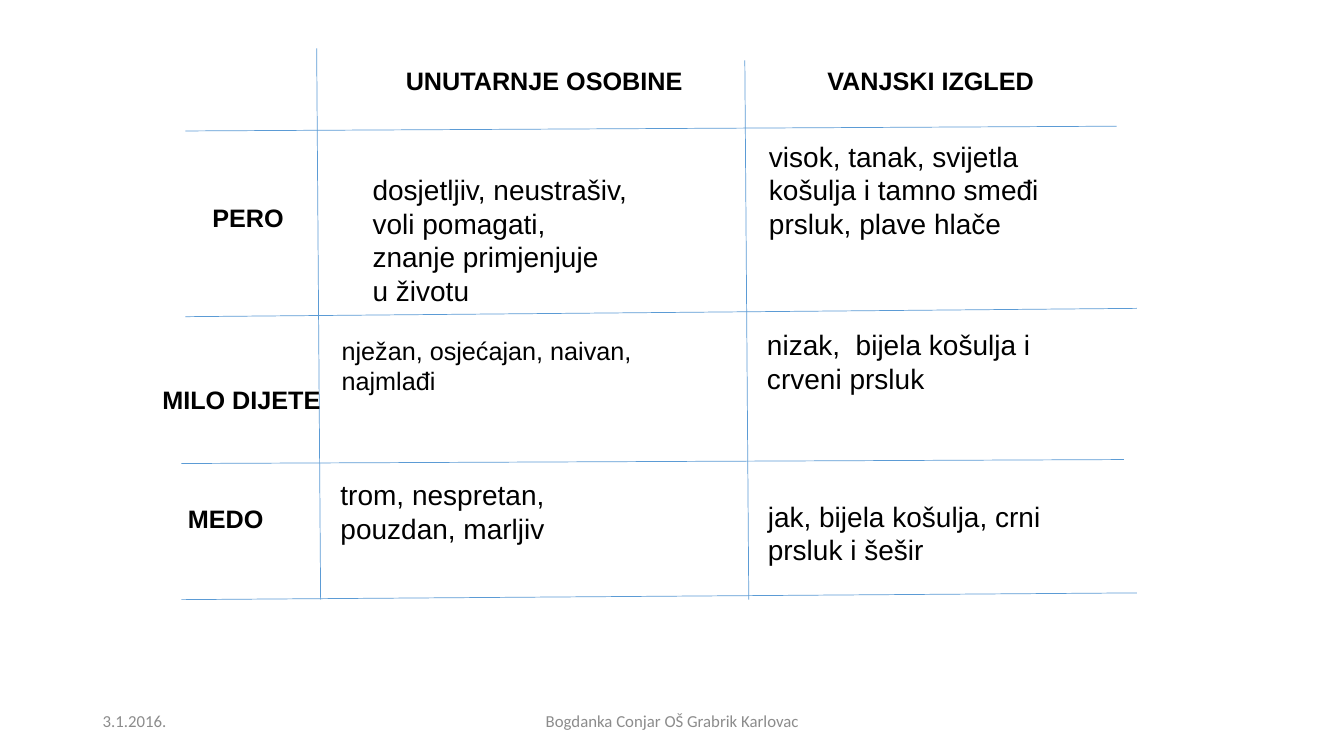
from lxml.etree import SubElement
from pptx import Presentation
from pptx.dml.color import RGBColor
from pptx.enum.shapes import MSO_CONNECTOR
from pptx.enum.text import MSO_ANCHOR, MSO_AUTO_SIZE, PP_ALIGN
from pptx.oxml.ns import qn
from pptx.util import Cm, Pt

ROW_RULES = [
    (4.67, 3.3, 28.14, 3.18),
    (4.67, 7.98, 28.65, 7.77),
    (4.57, 11.68, 28.32, 11.58),
    (4.57, 15.11, 28.65, 14.94),
]
COLUMN_RULES = [
    (7.98, 1.22, 8.08, 15.11),
    (18.77, 1.52, 18.87, 15.11),
]
HEADINGS = [
    ("UNUTARNJE OSOBINE", 9.93, 1.52, 7.57),
    ("VANJSKI IZGLED", 20.57, 1.52, 5.77),
    ("PERO", 5.08, 4.98, 2.34),
    ("MILO DIJETE", 3.81, 9.55, 4.55),
    ("MEDO", 4.47, 12.57, 2.44),
]
DESCRIPTIONS = [
    ("visok, tanak, svijetla košulja i tamno smeđi prsluk, plave hlače",
     19.13, 3.38, 8.2, 2.82, 20),
    ("nježan, osjećajan, naivan, najmlađi", 8.36, 8.33, 9.86, 1.8, 18),
    ("nizak,  bijela košulja i crveni prsluk", 19.08, 8.13, 9.12, 1.96, 20),
    ("trom, nespretan, pouzdan, marljiv", 8.33, 11.91, 6.4, 1.96, 20),
    ("jak, bijela košulja, crni prsluk i šešir", 19.1, 12.45, 7.44, 1.96, 20),
]
PERO_TRAITS = "dosjetljiv, neustrašiv,\nvoli pomagati,\nznanje primjenjuje\nu životu"


def color(value):
    return RGBColor.from_string(value)


class CharacterSlide:
    body_font = "Arial"
    footer_font = "Calibri"
    ink = "000000"
    muted = "8C8C8C"
    rule_color = "5B9BD5"

    def __init__(self, presentation):
        self.slide = presentation.slides.add_slide(presentation.slide_layouts[6])

    def rule(self, x1, y1, x2, y2):
        line = self.slide.shapes.add_connector(
            MSO_CONNECTOR.STRAIGHT, Cm(x1), Cm(y1), Cm(x2), Cm(y2))
        line.line.color.rgb = color(self.rule_color)
        line.line.width = Pt(0.5)
        SubElement(line._element.spPr, qn("a:effectLst"))

    def text(self, text, left, top, width, height, size=20, wrap=True, bold=False,
             align=PP_ALIGN.LEFT, font=body_font, ink=ink):
        box = self.slide.shapes.add_textbox(Cm(left), Cm(top), Cm(width), Cm(height))
        frame = box.text_frame
        frame.word_wrap = wrap
        frame.auto_size = MSO_AUTO_SIZE.SHAPE_TO_FIT_TEXT
        frame.text = text
        for paragraph in frame.paragraphs:
            paragraph.alignment = align
            paragraph.font.name = font
            paragraph.font.size = Pt(size)
            paragraph.font.bold = bold
            paragraph.font.color.rgb = color(ink)
        return frame

    def heading(self, text, left, top, width):
        self.text(text, left, top, width, 1.02, size=18, wrap=False, bold=True,
                  align=PP_ALIGN.CENTER)

    def footer(self, text, left, width, align):
        frame = self.text(text, left, 17.65, width, 1.02, size=12, align=align,
                          font=self.footer_font, ink=self.muted)
        frame.auto_size = MSO_AUTO_SIZE.NONE
        frame.vertical_anchor = MSO_ANCHOR.MIDDLE


def main():
    presentation = Presentation()
    presentation.slide_width = Cm(33.87)
    presentation.slide_height = Cm(19.05)
    page = CharacterSlide(presentation)
    for ends in ROW_RULES + COLUMN_RULES:
        page.rule(*ends)
    for heading in HEADINGS:
        page.heading(*heading)
    page.text(PERO_TRAITS, 9.14, 4.22, 7.16, 3.68, wrap=False)
    for description in DESCRIPTIONS:
        page.text(*description)
    page.footer("3.1.2016.", 2.34, 7.62, PP_ALIGN.LEFT)
    page.footer("Bogdanka Conjar OŠ Grabrik Karlovac", 11.23, 11.43, PP_ALIGN.CENTER)
    presentation.save("out.pptx")


if __name__ == "__main__":
    main()
